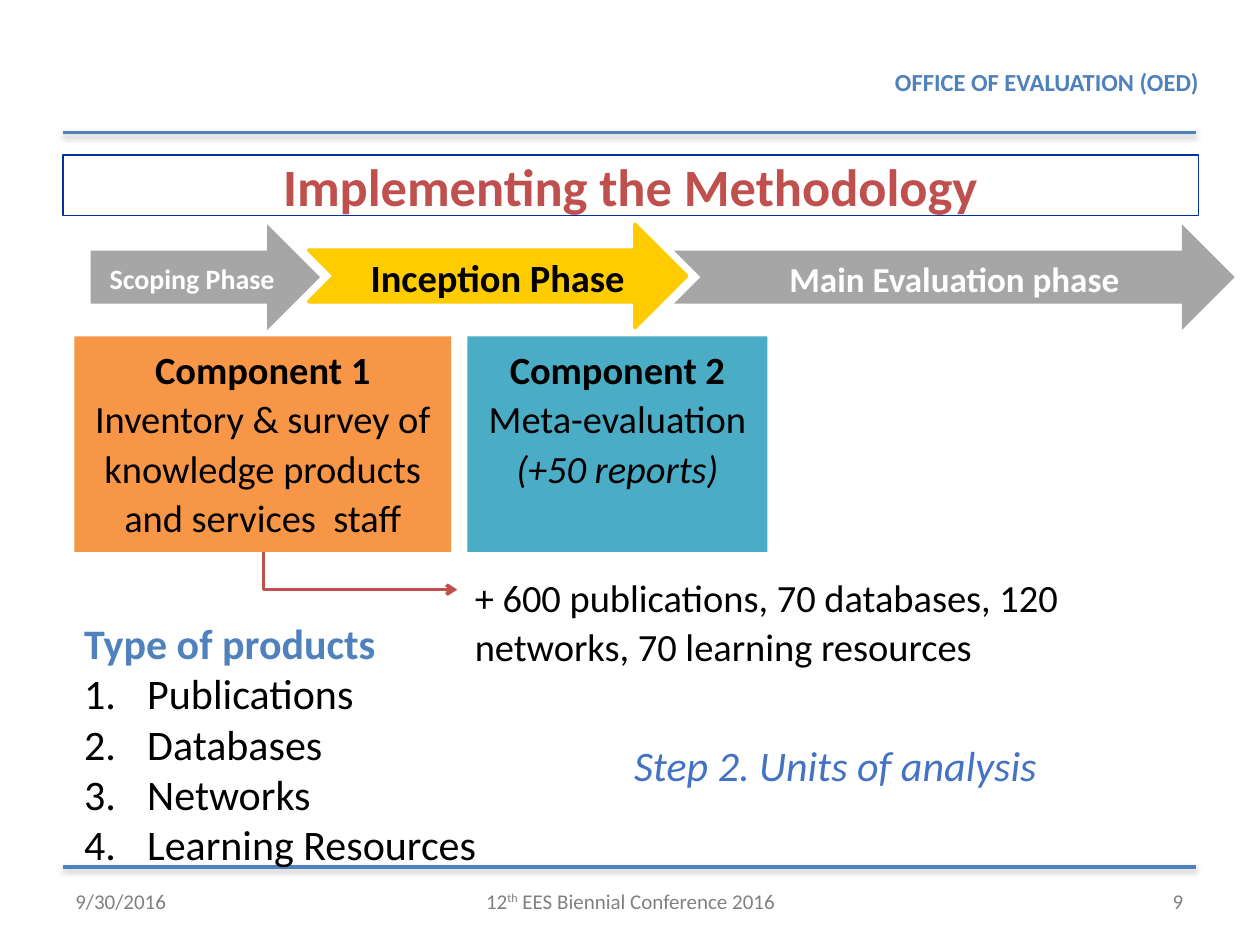
import pptx
import pptx.util
import pptx.dml.color
import pptx.enum.shapes
import pptx.enum.text
import pptx.oxml
import pptx.oxml.ns

Inches = pptx.util.Inches
Pt = pptx.util.Pt
Shape = pptx.enum.shapes.MSO_SHAPE
Link = pptx.enum.shapes.MSO_CONNECTOR
Align = pptx.enum.text.PP_ALIGN
Anchor = pptx.enum.text.MSO_ANCHOR

COLORS = {
    "blue": "4F81BD", "navy": "003399", "step": "4472C4", "red": "C0504D",
    "orange": "F79646", "teal": "4BACC6", "yellow": "FFCC00",
    "silver": "A6A6A6", "grey": "808080", "number": "7F7F7F",
    "black": "000000", "white": "FFFFFF",
}
NS = 'xmlns:a="http://schemas.openxmlformats.org/drawingml/2006/main"'
SHADOW = (f'<a:effectLst {NS}><a:outerShdw blurRad="39700" dist="20300" dir="5400000" '
          'rotWithShape="0"><a:srgbClr val="808080"><a:alpha val="38000"/></a:srgbClr>'
          '</a:outerShdw></a:effectLst>')
PLAIN = f"<a:effectLst {NS}/>"


def color(name):
    return pptx.dml.color.RGBColor.from_string(COLORS[name])


def add_run(para, text, size, tint, bold=False, italic=False, base=0):
    run = para.add_run()
    run.text = text
    font = run.font
    font.name, font.size = "Calibri", Pt(size)
    font.bold, font.italic = bold, italic
    font.color.rgb = color(tint)
    if base:
        font._element.set("baseline", str(base * 1000))


def set_frame(shape, align, anchor=Anchor.MIDDLE, loose=False):
    """Prepare the text frame and return its first paragraph."""
    frame = shape.text_frame
    frame.word_wrap = True
    frame.vertical_anchor = anchor
    para = frame.paragraphs[0]
    para.alignment = align
    if loose:
        para.line_spacing = 1.07
        para.space_after = Pt(8)
    return para


def add_label(slide, box, align, anchor=Anchor.MIDDLE, loose=False):
    shape = slide.shapes.add_textbox(*map(Inches, box))
    return set_frame(shape, align, anchor, loose)


def add_block(slide, kind, box, fill, anchor=Anchor.MIDDLE, edge=None):
    shape = slide.shapes.add_shape(kind, *map(Inches, box))
    shape.shadow.inherit = False
    shape.fill.solid()
    shape.fill.fore_color.rgb = color(fill)
    if edge:
        shape.line.color.rgb = color(edge)
        shape.line.width = Pt(2)
    else:
        shape.line.fill.background()
    return set_frame(shape, Align.CENTER, anchor, loose=True)


def add_line(slide, kind, ends, tint, effect):
    line = slide.shapes.add_connector(kind, *map(Inches, ends))
    line.line.color.rgb = color(tint)
    line.line.width = Pt(2)
    line._element.spPr.append(pptx.oxml.parse_xml(effect))
    return line


def add_head(slide, left, top, width):
    para = add_label(slide, (left + 6.33, top - 0.53, 2.96, 0.25), Align.CENTER)
    add_run(para, "OFFICE OF EVALUATION (OED)", 14, "blue", bold=True)
    add_line(slide, Link.STRAIGHT, (left, top, left + width, top), "blue", SHADOW)


def add_foot(slide, left, top, width):
    add_line(slide, Link.STRAIGHT, (left, top, left + width, top), "blue", SHADOW)
    top += 0.07
    date = add_label(slide, (left, top, 2.33, 0.4), Align.LEFT)
    add_run(date, "9/30/2016", 12, "grey")
    event = add_label(slide, (left + 2.92, top, 3.17, 0.4), Align.CENTER)
    add_run(event, "12", 12, "grey")
    add_run(event, "th", 12, "grey", base=30)
    add_run(event, " EES Biennial Conference 2016", 12, "grey")
    page = add_label(slide, (left + width - 2.33, top, 2.33, 0.4), Align.RIGHT)
    add_run(page, "9", 12, "number")


def add_title(slide, box):
    shape = slide.shapes.add_textbox(*map(Inches, box))
    shape.line.color.rgb = color("navy")
    shape.line.width = Pt(0.75)
    para = set_frame(shape, Align.CENTER)
    add_run(para, "Implementing the Methodology", 30, "red", bold=True)


def add_phases(slide, left, top):
    notch = Shape.NOTCHED_RIGHT_ARROW
    phases = [
        ("Inception Phase", notch, 1.73, 3, 0.82, "yellow", "yellow", 22, "black"),
        ("Main Evaluation phase", notch, 4.63, 4.45, 0.84, "silver", None, 20, "white"),
        ("Scoping Phase", Shape.RIGHT_ARROW, 0, 1.82, 0.84, "silver", None, 16, "white"),
    ]
    for text, kind, shift, width, height, fill, edge, size, tint in phases:
        box = (left + shift, top, width, height)
        para = add_block(slide, kind, box, fill, edge=edge)
        add_run(para, text, size, tint, bold=True)


def add_parts(slide, left, top, height):
    parts = [
        ("Component 1 ", 0, 2.99, "orange",
         [("Inventory & survey of knowledge products and services  staff", False)]),
        ("Component 2 ", 3.12, 2.38, "teal",
         [("Meta-evaluation ", False), ("(+50 reports)", True)]),
    ]
    for name, shift, width, fill, texts in parts:
        box = (left + shift, top, width, height)
        para = add_block(slide, Shape.RECTANGLE, box, fill, Anchor.TOP)
        add_run(para, name, 22, "black", bold=True)
        for text, italic in texts:
            add_run(para, text, 22, "black", italic=italic)


def add_elbow(slide, left, top, width, height):
    """Draw an arrow that goes down, then right, across the given box."""
    # The connector is laid out upright about the centre, then turned.
    mid, row = left + width / 2, top + height / 2
    ends = (mid + height / 2, row - width / 2, mid - height / 2, row + width / 2)
    line = add_line(slide, Link.ELBOW, ends, "red", PLAIN)
    props = line._element.spPr
    props.find(pptx.oxml.ns.qn("a:xfrm")).set("rot", str(270 * 60000))
    props.find(pptx.oxml.ns.qn("a:prstGeom")).set("prst", "bentConnector2")
    tail = pptx.oxml.parse_xml(f'<a:tailEnd {NS} type="arrow"/>')
    props.find(pptx.oxml.ns.qn("a:ln")).append(tail)


def add_types(slide, box):
    shape = slide.shapes.add_textbox(*map(Inches, box))
    para = set_frame(shape, Align.LEFT)
    add_run(para, "Type of products", 24, "blue", bold=True)
    for text in ("Publications", "Databases", "Networks", "Learning Resources"):
        para = shape.text_frame.add_paragraph()
        props = para._p.get_or_add_pPr()
        props.set("marL", str(Inches(0.5)))
        props.set("indent", str(-Inches(0.5)))
        props.append(pptx.oxml.parse_xml(f'<a:buAutoNum {NS} type="arabicPeriod"/>'))
        add_run(para, text, 24, "black")


def add_notes(slide, left, top):
    """Place the counts and, below them, the step."""
    para = add_label(slide, (left, top, 5.6, 0.9), Align.LEFT, Anchor.TOP, loose=True)
    add_run(para, "+ 600 publications, 70 databases, 120 networks, "
            "70 learning resources", 22, "black")
    para = add_label(slide, (left + 0.54, top + 1.05, 4.84, 1.05), Align.CENTER, loose=True)
    add_run(para, "Step 2. Units of analysis", 24, "step", italic=True)


def main():
    deck = pptx.Presentation()
    deck.slide_width, deck.slide_height = Inches(10), Inches(7.5)
    slide = deck.slides.add_slide(deck.slide_layouts[6])
    add_head(slide, 0.5, 1.05, 8.99)
    add_foot(slide, 0.5, 6.88, 8.99)
    add_types(slide, (0.57, 4.85, 3.61, 2.1))
    add_title(slide, (0.5, 1.23, 9.01, 0.48))
    add_parts(slide, 0.59, 2.67, 1.71)
    add_phases(slide, 0.72, 1.78)
    add_elbow(slide, 2.09, 4.38, 1.54, 0.3)
    add_notes(slide, 3.67, 4.48)
    deck.save("out.pptx")


if __name__ == "__main__":
    main()
